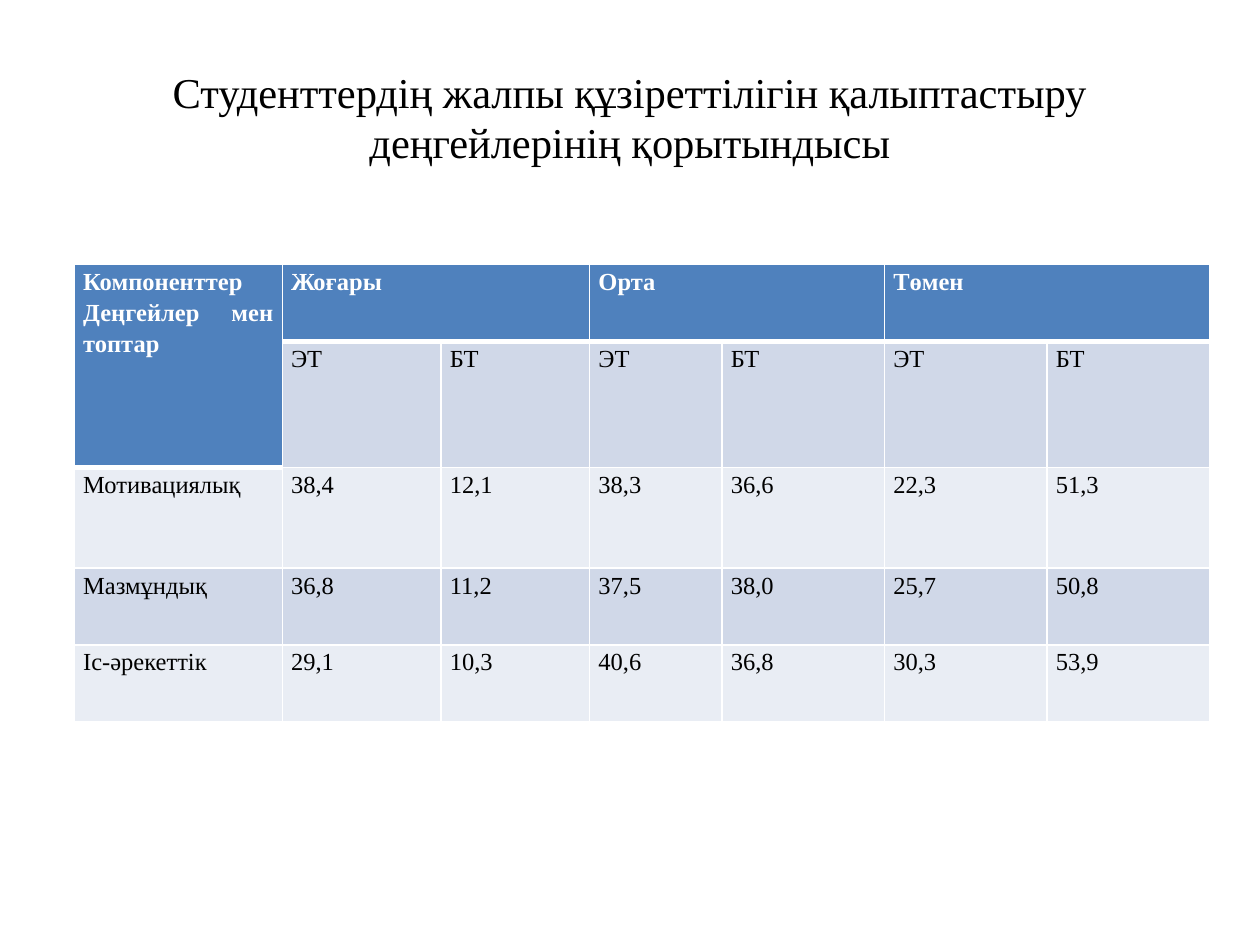
from lxml.etree import SubElement
from pptx import Presentation
from pptx.dml.color import RGBColor
from pptx.enum.text import MSO_ANCHOR, PP_ALIGN
from pptx.oxml.ns import qn
from pptx.util import Inches, Pt

TITLE = "Студенттердің жалпы құзіреттілігін қалыптастыру деңгейлерінің қорытындысы"
ROWS = [
    ["Компоненттер\nДеңгейлер мен топтар", "Жоғары", "", "Орта", "", "Төмен", ""],
    ["", "ЭТ", "БТ", "ЭТ", "БТ", "ЭТ", "БТ"],
    ["Мотивациялық", "38,4", "12,1", "38,3", "36,6", "22,3", "51,3"],
    ["Мазмұндық", "36,8", "11,2", "37,5", "38,0", "25,7", "50,8"],
    ["Іс-әрекеттік", "29,1", "10,3", "40,6", "36,8", "30,3", "53,9"],
]
COLUMN_WIDTHS = [1.65, 1.26, 1.18, 1.05, 1.29, 1.29, 1.29]
ROW_HEIGHTS = [0.61, 1, 0.8, 0.61, 0.61]
MERGES = [((0, 0), (1, 0))] + [((0, column), (0, column + 1)) for column in (1, 3, 5)]
HEADER_FILL = "4F81BD"
BAND_FILLS = ["E9EDF4", "D0D8E8"]
FONT_NAME = "Times New Roman"
TITLE_FORMAT = {"alignment": PP_ALIGN.CENTER, "line_spacing": Pt(29)}
CELL_FORMAT = {"alignment": PP_ALIGN.JUSTIFY, "line_spacing": 1.15}
CELL_MARGINS = {
    "margin_left": Inches(0.07), "margin_right": Inches(0.07),
    "margin_top": 0, "margin_bottom": 0,
}


def color(value):
    return RGBColor.from_string(value)


def set_attributes(target, values):
    for name, value in values.items():
        setattr(target, name, value)


def write_text(text_frame, text, paragraph_format, size, font_color, bold=False):
    text_frame.text = text
    for paragraph in text_frame.paragraphs:
        set_attributes(paragraph, paragraph_format)
        for run in paragraph.runs:
            set_attributes(run.font, {"name": FONT_NAME, "size": Pt(size), "bold": bold})
            run.font.color.rgb = color(font_color)


def add_borders(cell, bottom_width):
    properties = cell._tc.get_or_add_tcPr()
    widths = {"lnL": 1, "lnR": 1, "lnT": 1, "lnB": bottom_width}
    for side, width in widths.items():
        line = SubElement(properties, qn(f"a:{side}"), w=str(Pt(width)))
        fill = SubElement(line, qn("a:solidFill"))
        SubElement(fill, qn("a:srgbClr"), val="FFFFFF")


def add_title(slide):
    shape = slide.shapes.add_textbox(Inches(0.5), Inches(0.3), Inches(9), Inches(1.25))
    set_attributes(shape.text_frame, {"word_wrap": True, "vertical_anchor": MSO_ANCHOR.MIDDLE})
    write_text(shape.text_frame, TITLE, TITLE_FORMAT, 24.3, "000000")


def add_levels_table(slide):
    table = slide.shapes.add_table(
        len(ROWS), len(COLUMN_WIDTHS), Inches(0.59), Inches(2.1),
        Inches(sum(COLUMN_WIDTHS)), Inches(sum(ROW_HEIGHTS)),
    ).table
    for column, width in zip(table.columns, COLUMN_WIDTHS):
        column.width = Inches(width)
    for row, height in zip(table.rows, ROW_HEIGHTS):
        row.height = Inches(height)
    for first, last in MERGES:
        table.cell(*first).merge(table.cell(*last))
    for row_index, row in enumerate(ROWS):
        for column_index, text in enumerate(row):
            cell = table.cell(row_index, column_index)
            is_header = row_index == 0 or (row_index, column_index) == (1, 0)
            set_attributes(cell, CELL_MARGINS)
            add_borders(cell, 3 if is_header else 1)
            cell.fill.solid()
            cell.fill.fore_color.rgb = color(HEADER_FILL if is_header else BAND_FILLS[row_index % 2])
            font_color = "FFFFFF" if is_header else "000000"
            write_text(cell.text_frame, text, CELL_FORMAT, 14, font_color, is_header)


def main():
    presentation = Presentation()
    set_attributes(presentation, {"slide_width": Inches(10), "slide_height": Inches(7.5)})
    slide = presentation.slides.add_slide(presentation.slide_layouts[6])
    add_title(slide)
    add_levels_table(slide)
    presentation.save("out.pptx")


if __name__ == "__main__":
    main()
